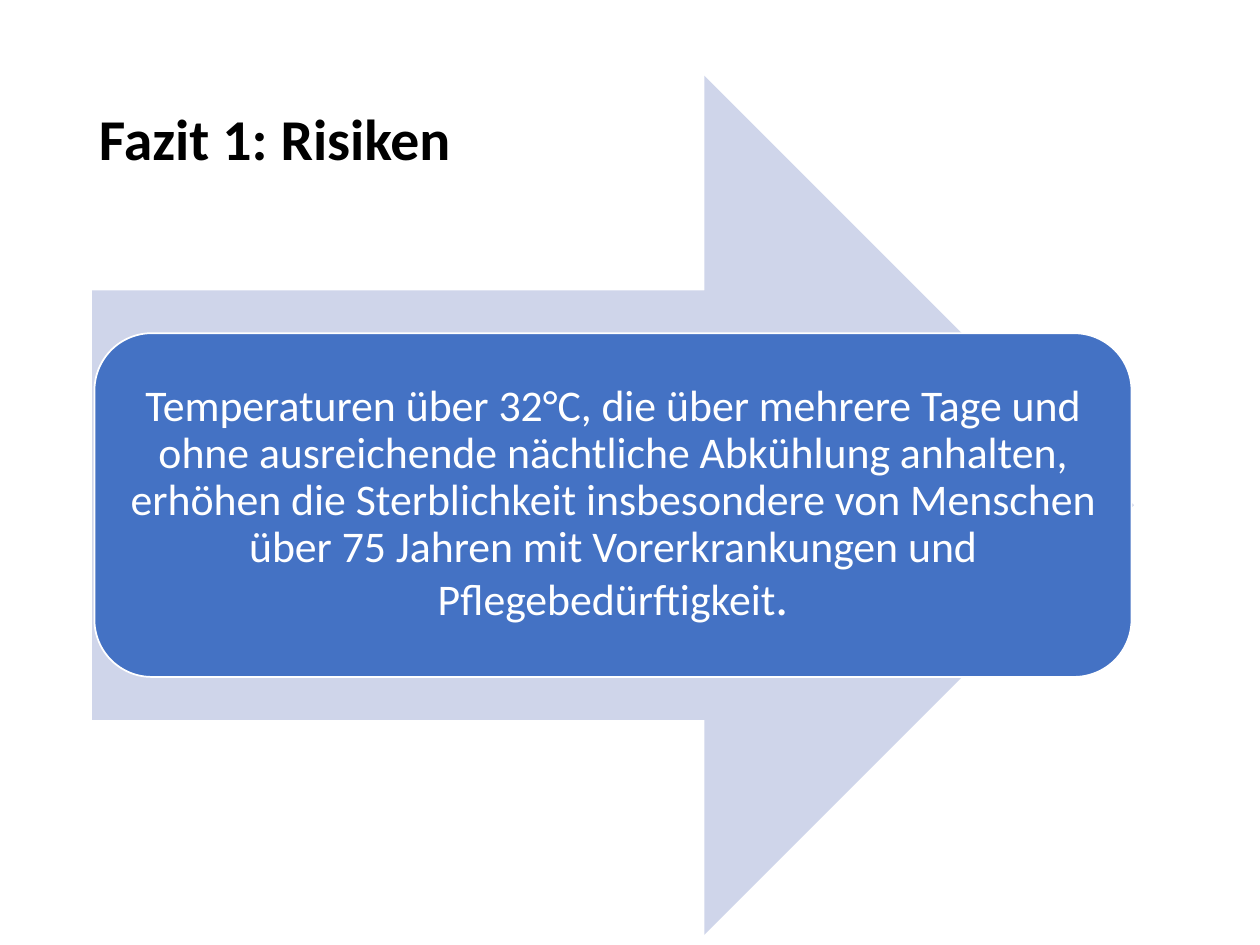
from dataclasses import dataclass

from pptx import Presentation
from pptx.dml.color import RGBColor
from pptx.enum import shapes, text
from pptx.util import Pt


@dataclass(frozen=True)
class Theme:
    font: str = "Calibri"
    ink: RGBColor = RGBColor(0, 0, 0)
    paper: RGBColor = RGBColor(255, 255, 255)
    arrow: RGBColor = RGBColor(0xCF, 0xD5, 0xEA)
    panel: RGBColor = RGBColor(0x44, 0x72, 0xC4)
    title_size: int = 33
    body_size: int = 25
    stop_size: int = 29


THEME = Theme()


def add_shape(page, kind, area, fill, line=None):
    """Add a flat preset shape; area is left, top, width, height in points."""
    shape = page.shapes.add_shape(kind, *map(Pt, area))
    shape.shadow.inherit = False
    shape.fill.solid()
    shape.fill.fore_color.rgb = fill
    if line is None:
        shape.line.fill.background()
    else:
        shape.line.color.rgb = line
        shape.line.width = Pt(1)
    return shape


def write(box, spans, color, align, inset, bold=False):
    """Fill a box with one paragraph of (words, size) spans."""
    frame = box.text_frame
    frame.word_wrap = True
    frame.vertical_anchor = text.MSO_ANCHOR.MIDDLE
    frame.margin_left = frame.margin_right = Pt(7.2)
    frame.margin_top = frame.margin_bottom = Pt(inset)
    para = frame.paragraphs[0]
    para.alignment = align
    para.line_spacing = 0.9
    para.font.name = THEME.font
    para.font.color.rgb = color
    para.font.bold = bold
    for words, size in spans:
        span = para.add_run()
        span.text = words
        span.font.size = Pt(size)


def main():
    deck = Presentation()
    deck.slide_width, deck.slide_height = Pt(720), Pt(540)
    page = deck.slides.add_slide(deck.slide_layouts[6])

    # Title
    title = page.shapes.add_textbox(*map(Pt, (49.5, 28.8, 621, 104.4)))
    write(title, [("Fazit 1: Risiken", THEME.title_size)], THEME.ink,
          text.PP_ALIGN.LEFT, inset=3.6, bold=True)

    # Arrow behind the statement
    add_shape(page, shapes.MSO_SHAPE.RIGHT_ARROW,
              (52.6, 43.2, 595.4, 491), THEME.arrow)

    # Statement
    statement = add_shape(page, shapes.MSO_SHAPE.ROUNDED_RECTANGLE,
                          (54, 190.4, 592.6, 196.4), THEME.panel, THEME.paper)
    write(statement, [
        ("Temperaturen über 32°C, die über mehrere Tage und ohne ausreichende "
         "nächtliche Abkühlung anhalten, erhöhen die Sterblichkeit "
         "insbesondere von Menschen über 75 Jahren mit Vorerkrankungen und "
         "Pflegebedürftigkeit", THEME.body_size),
        (".", THEME.stop_size),
    ], THEME.paper, text.PP_ALIGN.CENTER, inset=7.2)

    deck.save("out.pptx")


if __name__ == "__main__":
    main()
